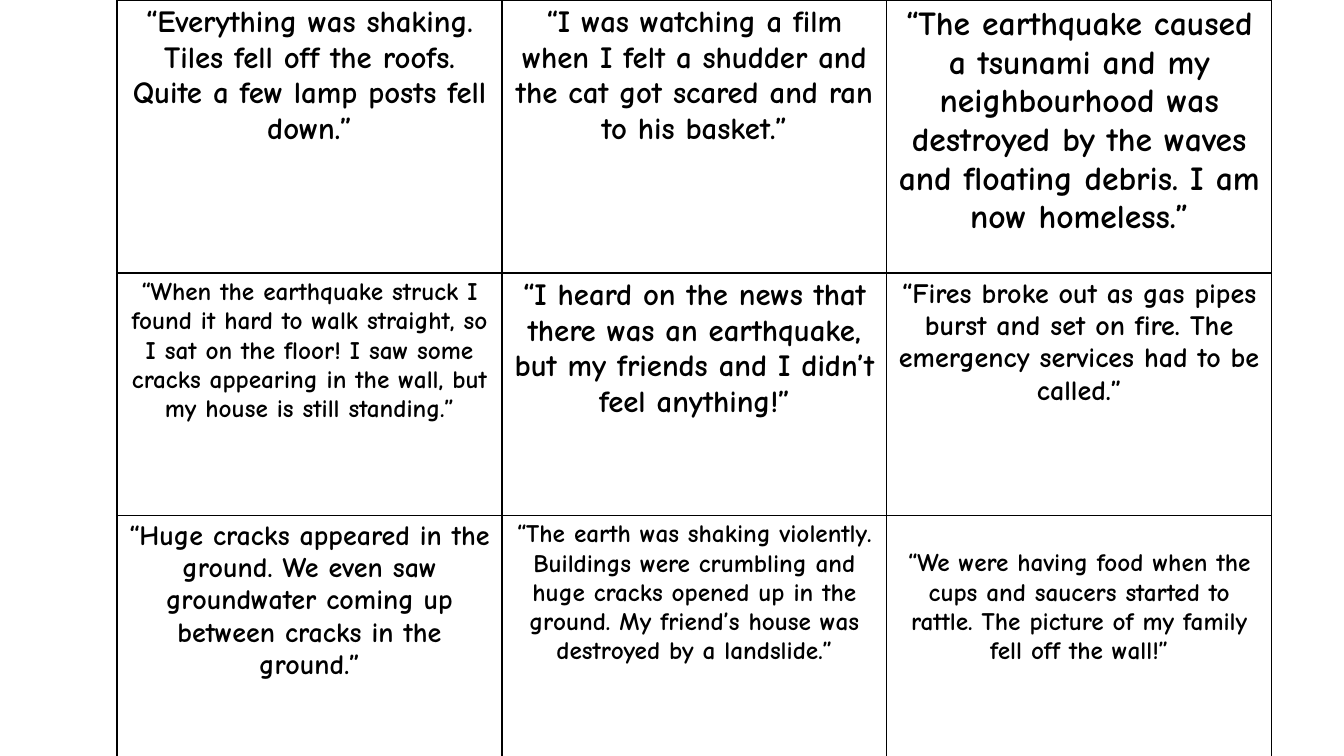
from lxml.etree import SubElement
from pptx import Presentation
from pptx.dml.color import RGBColor
from pptx.enum.text import PP_ALIGN as Align
from pptx.oxml.ns import qn
from pptx.util import Cm, Pt

BLACK = RGBColor(0, 0, 0)
WHITE = RGBColor(255, 255, 255)
FONT = "Comic Neue"

COLUMN_WIDTH = Cm(9.7)
ROW_HEIGHTS = [Cm(6.88), Cm(6.1), Cm(6.1)]
TOP_MARGIN = Cm(0.13)
LOWERED_MARGIN = Cm(0.86)

# Each quote: text, size in points, top margin
QUOTES = [
    [
        ("“Everything was shaking. Tiles fell off the roofs. Quite a few lamp posts fell down.”",
         22, TOP_MARGIN),
        ("“I was watching a film when I felt a shudder and the cat got scared and ran to his basket.”",
         22, TOP_MARGIN),
        ("“The earthquake caused a tsunami and my neighbourhood was destroyed by the waves and "
         "floating debris. I am now homeless.”", 24, TOP_MARGIN),
    ],
    [
        ("“When the earthquake struck I found it hard to walk straight, so I sat on the floor! "
         "I saw some cracks appearing in the wall, but my house is still standing.”", 18, TOP_MARGIN),
        ("“I heard on the news that there was an earthquake, but my friends and I didn’t feel anything!”",
         22, TOP_MARGIN),
        ("“Fires broke out as gas pipes burst and set on fire. The emergency services had to be called.”",
         20, TOP_MARGIN),
    ],
    [
        ("“Huge cracks appeared in the ground. We even saw groundwater coming up between cracks "
         "in the ground.”", 20, TOP_MARGIN),
        ("“The earth was shaking violently. Buildings were crumbling and huge cracks opened up in "
         "the ground. My friend’s house was destroyed by a landslide.”", 18, TOP_MARGIN),
        ("“We were having food when the cups and saucers started to rattle. The picture of my "
         "family fell off the wall!”", 18, LOWERED_MARGIN),
    ],
]


def add_borders(cell):
    properties = cell._tc.get_or_add_tcPr()
    for side in ("a:lnL", "a:lnR", "a:lnT", "a:lnB"):
        border = SubElement(properties, qn(side), w=str(Pt(1)))
        fill = SubElement(border, qn("a:solidFill"))
        SubElement(fill, qn("a:srgbClr"), val=str(BLACK))


def fill_quote_card(cell, quote, size, top_margin):
    add_borders(cell)
    cell.fill.solid()
    cell.fill.fore_color.rgb = WHITE
    cell.margin_top = top_margin
    cell.text_frame.text = quote
    paragraph = cell.text_frame.paragraphs[0]
    paragraph.alignment = Align.CENTER
    font = paragraph.runs[0].font
    font.name = FONT
    font.size = Pt(size)
    font.bold = True
    font.color.rgb = BLACK


def add_quote_grid(slide, left, top):
    columns = len(QUOTES[0])
    grid = slide.shapes.add_table(len(QUOTES), columns, left, top,
                                  COLUMN_WIDTH * columns, sum(ROW_HEIGHTS)).table
    for column in grid.columns:
        column.width = COLUMN_WIDTH
    for row, height, quotes in zip(grid.rows, ROW_HEIGHTS, QUOTES):
        row.height = height
        for cell, card in zip(row.cells, quotes):
            fill_quote_card(cell, *card)


def main():
    deck = Presentation()
    deck.slide_width, deck.slide_height = Cm(33.87), Cm(19.05)
    slide = deck.slides.add_slide(deck.slide_layouts[6])

    # Earthquake quote cards
    add_quote_grid(slide, Cm(2.95), Cm(0))
    deck.save("out.pptx")


if __name__ == "__main__":
    main()
